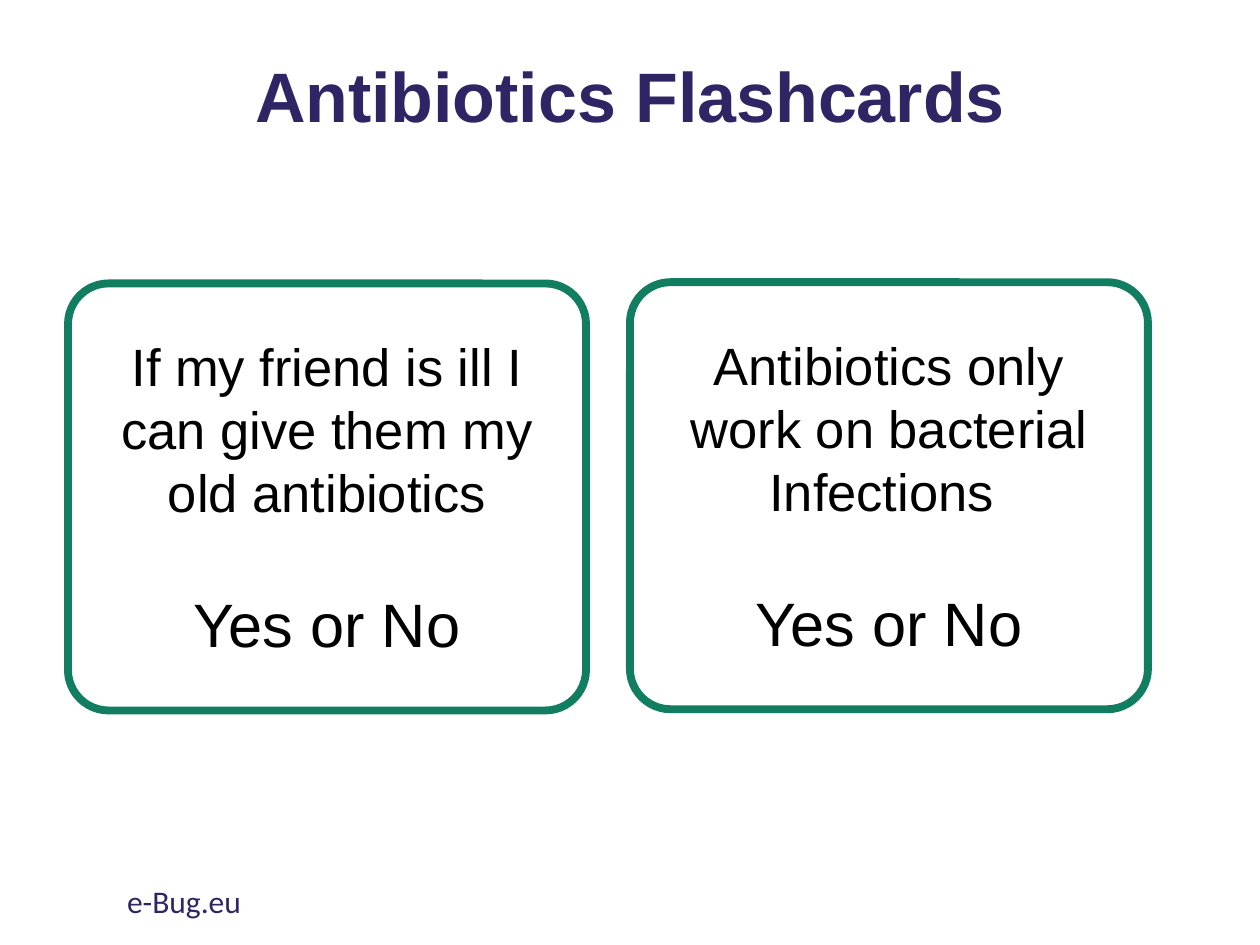
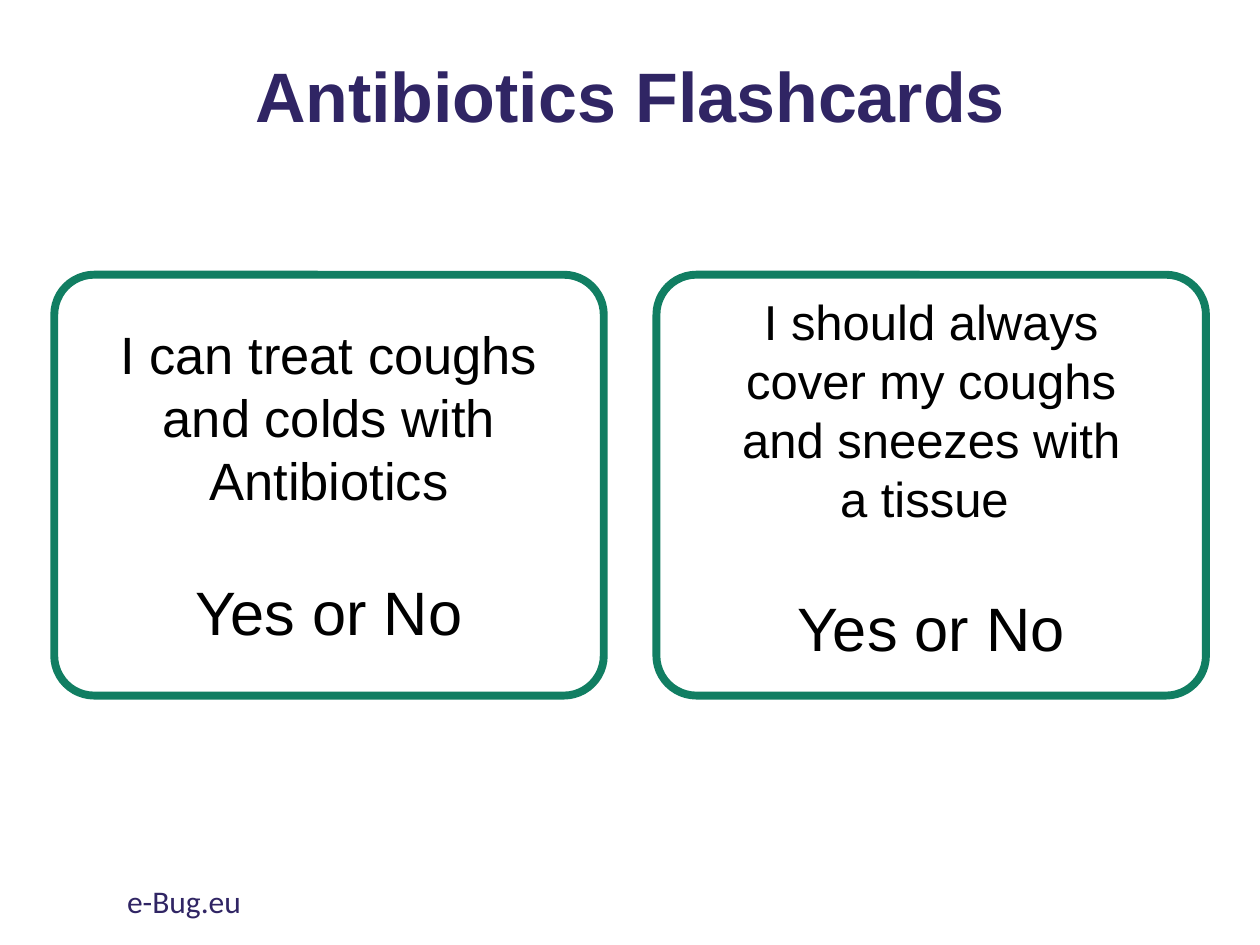
"""Build two slides of antibiotics flashcards."""
from pptx import Presentation
from pptx.dml.color import RGBColor
from pptx.enum.shapes import MSO_SHAPE as Shape
from pptx.enum.text import MSO_ANCHOR as Anchor, PP_ALIGN as Align
from pptx.util import Pt

TITLE = "Antibiotics Flashcards"
FOOTER = "e-Bug.eu"
QUESTION = "Yes or No"
NAVY, GREEN, BLACK, WHITE = "302564", "117E62", "000000", "FFFFFF"

DECK = [
    {
        "size": (296, 244),
        "cards": [
            {"at": (38.9, 162), "statement": ["If my friend is ill I", "can give them my old antibiotics"]},
            {"at": (360, 161.3), "statement": ["Antibiotics only", "work on bacterial", "Infections "]},
        ],
    },
    {
        "size": (314, 240.5),
        "cards": [
            {"at": (31, 157), "statement": ["I can treat coughs and colds with Antibiotics"]},
            {
                "at": (375.1, 157),
                "statement": ["I should always", "cover my coughs", "and sneezes with", "a tissue "],
                "font_size": 28,
                "bottom": 12,
            },
        ],
    },
]


def color(value):
    return RGBColor.from_string(value)


def write(frame, text, size, font="Arial", ink=BLACK, bold=False,
          align=Align.CENTER, before=0, spacing=None):
    first = frame.paragraphs[0]
    line = frame.add_paragraph() if first.runs else first
    line.alignment = align
    if before:
        line.space_before = Pt(before)
    if spacing:
        line.line_spacing = spacing
    run = line.add_run()
    run.text = text
    run.font.name, run.font.size, run.font.bold = font, Pt(size), bold
    run.font.color.rgb = color(ink)


def add_label(slide, box, text, size, anchor=Anchor.TOP, **style):
    frame = slide.shapes.add_textbox(*map(Pt, box)).text_frame
    frame.word_wrap = True
    frame.vertical_anchor = anchor
    write(frame, text, size, ink=NAVY, **style)


def add_card(slide, size, at, statement, font_size=30, bottom=3.6):
    card = slide.shapes.add_shape(Shape.ROUNDED_RECTANGLE, *map(Pt, at + size))
    card.adjustments[0] = 0.095
    card.shadow.inherit = False
    card.fill.background()
    card.line.color.rgb = color(GREEN)
    card.line.width = Pt(4.5)
    frame = card.text_frame
    frame.word_wrap = True
    frame.vertical_anchor = Anchor.MIDDLE
    frame.margin_bottom = Pt(bottom)
    for line in statement:
        write(frame, line, font_size)
    write(frame, QUESTION, 35, before=36)


def main():
    deck = Presentation()
    deck.slide_width, deck.slide_height = Pt(720), Pt(540)
    for page in DECK:
        slide = deck.slides.add_slide(deck.slide_layouts[6])
        slide.background.fill.solid()
        slide.background.fill.fore_color.rgb = color(WHITE)
        add_label(slide, (49.7, 20.2, 620.6, 74.2), TITLE, 40,
                  anchor=Anchor.MIDDLE, bold=True, spacing=0.9)
        for card in page["cards"]:
            add_card(slide, page["size"], **card)
        add_label(slide, (65.5, 500.4, 243.4, 28.8), FOOTER, 18,
                  font="Calibri", align=Align.LEFT)
    deck.save("out.pptx")


if __name__ == "__main__":
    main()
